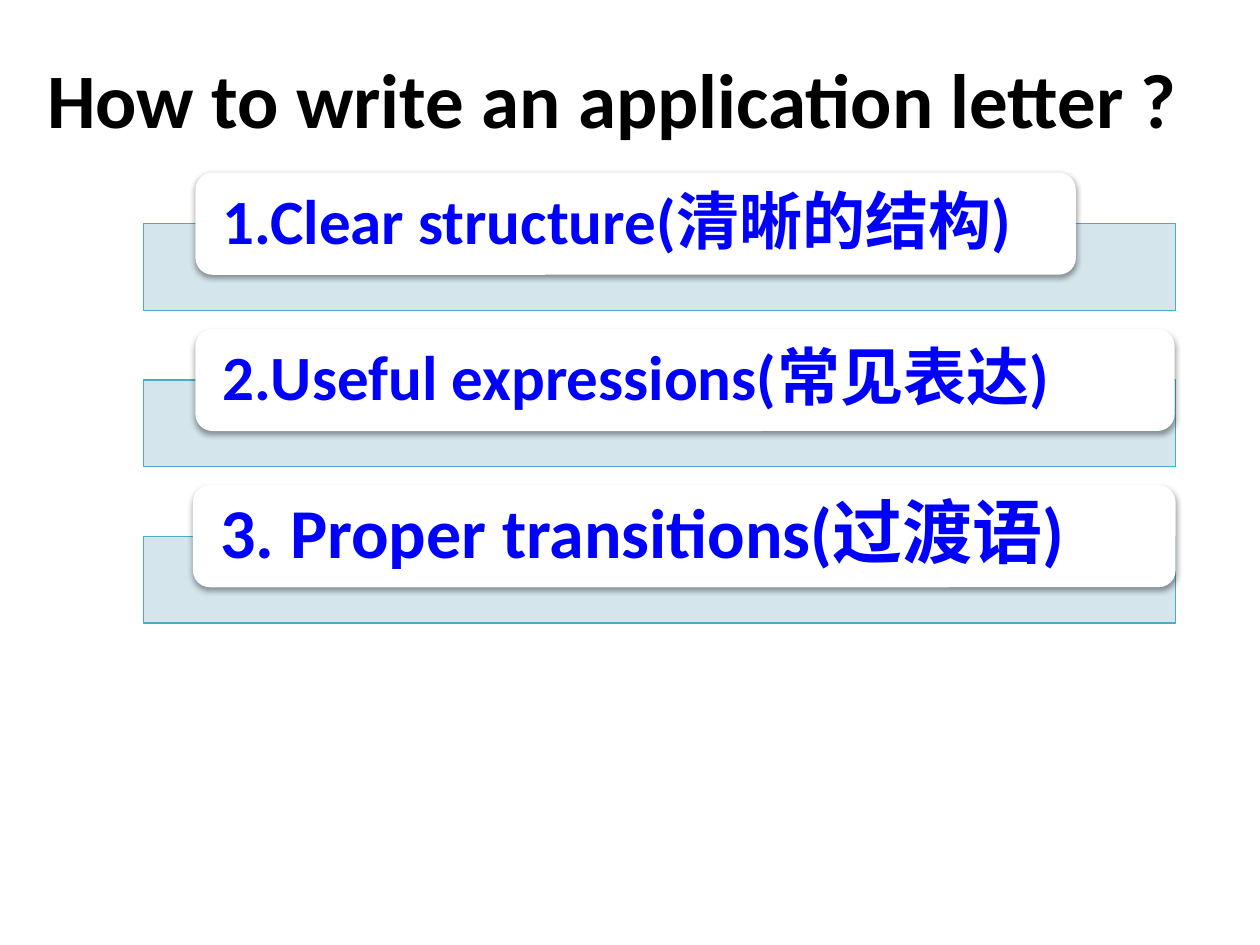
from dataclasses import dataclass

from lxml import etree
from pptx import Presentation
from pptx import util as u
from pptx.dml.color import RGBColor
from pptx.enum import shapes, text
from pptx.oxml.ns import qn


@dataclass
class Point:
    label: str
    left: float
    width: float
    size: int = 36


POINTS = [
    Point("1.Clear structure(清晰的结构)", 3.94, 17.75),
    Point("2.Useful expressions(常见表达)", 3.94, 19.74),
    Point("3. Proper transitions(过渡语)", 3.89, 19.81, 40),
]
FIRST_TOP, PITCH = 3.48, 3.15  # cm
BAR_DROP = 1.03


def color(value: str) -> RGBColor:
    return RGBColor.from_string(value)


def write(tf, content: str, *, size: int, fill: str, before: float = 0,
          line_spacing: float = 1.0) -> None:
    tf.word_wrap = True
    p = tf.paragraphs[0]
    p.alignment = text.PP_ALIGN.LEFT
    p.space_before = u.Pt(before)
    p.line_spacing = line_spacing
    r = p.add_run()
    r.text = content
    r.font.name = "Calibri"
    r.font.size = u.Pt(size)
    r.font.bold = True
    r.font.color.rgb = color(fill)


def add_box(s, kind, left: float, top: float, width: float, height: float, fill: str):
    sp = s.shapes.add_shape(kind, u.Cm(left), u.Cm(top), u.Cm(width), u.Cm(height))
    sp.shadow.inherit = False
    sp.fill.solid()
    sp.fill.fore_color.rgb = color(fill)
    sp.line.fill.background()
    return sp


def set_alpha(sp, percent: int) -> None:
    clr = sp._element.spPr.find(qn("a:solidFill"))[0]
    etree.SubElement(clr, qn("a:alpha"), val=str(percent * 1000))


def add_shadow(sp) -> None:
    effects = sp._element.spPr.find(qn("a:effectLst"))
    shadow = etree.SubElement(
        effects, qn("a:outerShdw"), blurRad=str(u.Pt(3.1)), dist=str(u.Pt(1.6)),
        dir="5400000", rotWithShape="0")
    clr = etree.SubElement(shadow, qn("a:srgbClr"), val="000000")
    etree.SubElement(clr, qn("a:alpha"), val="38000")


def add_point(s, point: Point, top: float) -> None:
    # Pale bar behind the card
    bar = add_box(s, shapes.MSO_SHAPE.RECTANGLE, 2.9, top + BAR_DROP, 20.8, 1.75, "D0E3EA")
    set_alpha(bar, 90)
    bar.line.color.rgb = color("4BACC6")
    bar.line.width = u.Pt(0.75)

    # White card with its label
    card = add_box(s, shapes.MSO_SHAPE.ROUNDED_RECTANGLE, point.left, top,
                   point.width, 2.06, "FFFFFF")
    add_shadow(card)
    tf = card.text_frame
    tf.margin_left, tf.margin_right = u.Cm(0.45), u.Cm(0.2)
    tf.margin_top = tf.margin_bottom = 0
    tf.vertical_anchor = text.MSO_ANCHOR.MIDDLE
    write(tf, point.label, size=point.size, fill="0000FF", line_spacing=0.9)


def main() -> None:
    prs = Presentation()
    prs.slide_width, prs.slide_height = u.Cm(25.4), u.Cm(19.05)
    s = prs.slides.add_slide(prs.slide_layouts[6])

    # Heading
    title = s.shapes.add_textbox(u.Cm(0.7), u.Cm(0.92), u.Cm(23.44), u.Cm(16.1))
    write(title.text_frame, "How to write an application letter ?", size=44,
          fill="000000", before=3.5)

    # Stacked points
    for i, point in enumerate(POINTS):
        add_point(s, point, FIRST_TOP + i * PITCH)

    prs.save("out.pptx")


if __name__ == "__main__":
    main()
